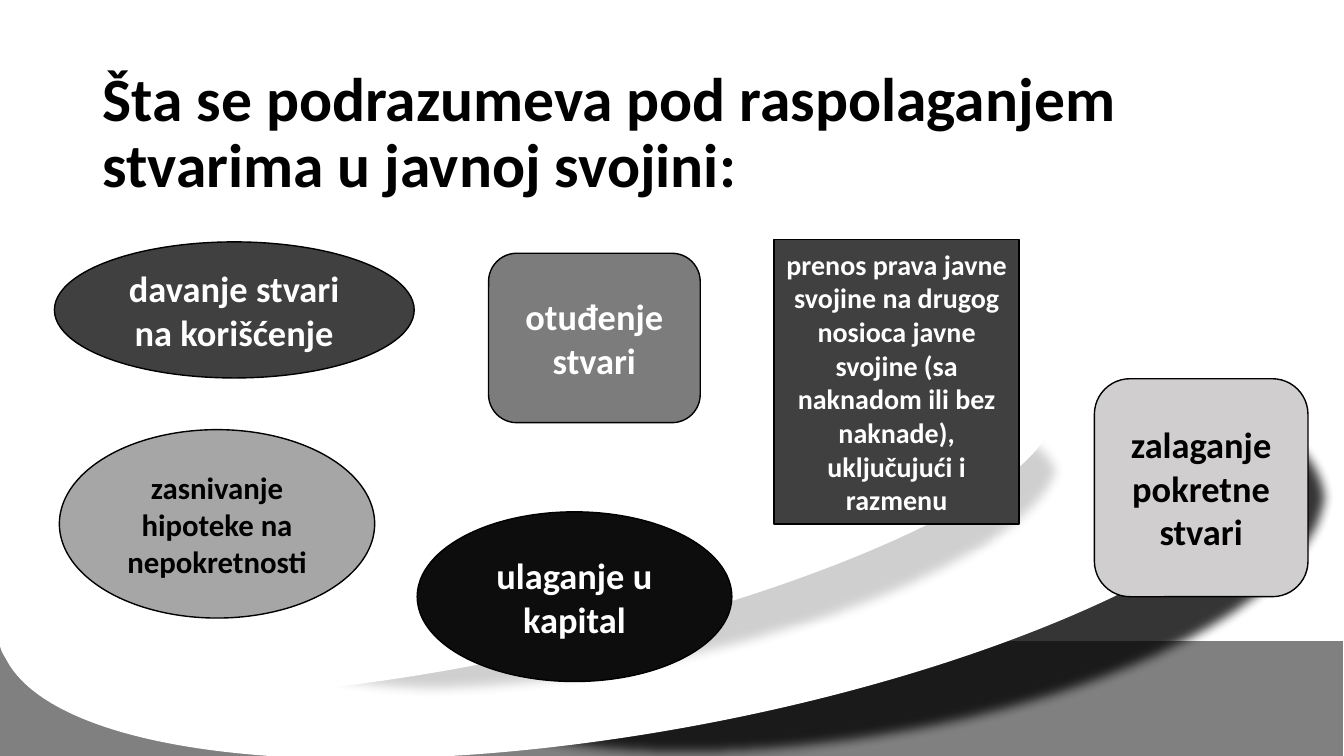
from dataclasses import dataclass

from lxml import etree
from pptx import Presentation
from pptx import util as u
from pptx.dml.color import RGBColor
from pptx.enum import shapes, text
from pptx.oxml.ns import qn

FONT = "Calibri"
COLORS = {
    "white": "FFFFFF",
    "black": "000000",
    "ink": "0D0D0D",
    "charcoal": "404040",
    "slate": "7C7C7C",
    "band": "808080",
    "silver": "A6A6A6",
    "pearl": "D0CECE",
}
RECT = shapes.MSO_SHAPE.RECTANGLE
ROUNDED = shapes.MSO_SHAPE.ROUNDED_RECTANGLE
OVAL = shapes.MSO_SHAPE.OVAL


@dataclass
class Backdrop:
    kind: shapes.MSO_SHAPE
    left: float
    top: float
    width: float
    height: float
    fill: str
    rotation: float = 0
    opacity: int = 100
    soft_edge: float = 0


@dataclass
class Card:
    kind: shapes.MSO_SHAPE
    left: float
    top: float
    width: float
    height: float
    fill: str
    wording: str
    size: float = 26
    ink: str = "white"


# Each sweep is a white ellipse lying over a soft dark one.
BACKDROPS = [
    Backdrop(RECT, -0.7, 457.9, 960, 87.1, "band"),
    Backdrop(OVAL, 224, 255, 732, 282, "black", -7.5, 79, 8),
    Backdrop(OVAL, -8.6, 217.4, 959, 303.1, "white", -10.6),
    Backdrop(OVAL, 168, 306, 600, 174, "black", -12, 19, 8),
    Backdrop(OVAL, -9.4, 288, 769.7, 177.8, "white", -12.7),
]

CARDS = [
    Card(OVAL, 38.9, 172.8, 257, 97.2, "charcoal", "davanje stvari na korišćenje"),
    Card(ROUNDED, 349, 180.9, 151.2, 121, "slate", "otuđenje stvari"),
    Card(RECT, 553, 171.2, 175, 203, "charcoal",
         "prenos prava javne svojine na drugog nosioca javne svojine "
         "(sa naknadom ili bez naknade), uključujući i razmenu", 20),
    Card(OVAL, 42.4, 306.9, 225.2, 134.6, "silver",
         "zasnivanje hipoteke na nepokretnosti", 22, "black"),
    Card(OVAL, 298, 365.6, 224.8, 121.2, "ink", "ulaganje u kapital"),
    Card(ROUNDED, 781.7, 270.5, 152.6, 155.7, "pearl",
         "zalaganje pokretne stvari", 26, "black"),
]


def color(name: str) -> RGBColor:
    return RGBColor.from_string(COLORS[name])


def add_filled_shape(slide, item: Backdrop | Card):
    shape = slide.shapes.add_shape(
        item.kind, u.Pt(item.left), u.Pt(item.top), u.Pt(item.width), u.Pt(item.height))
    shape.shadow.inherit = False
    shape.fill.solid()
    shape.fill.fore_color.rgb = color(item.fill)
    return shape


def write(shape, wording: str, size: float, ink: str, alignment, spacing: float = 1) -> None:
    frame = shape.text_frame
    frame.word_wrap = True
    frame.vertical_anchor = text.MSO_ANCHOR.MIDDLE
    paragraph = frame.paragraphs[0]
    paragraph.alignment = alignment
    paragraph.line_spacing = spacing
    run = paragraph.add_run()
    run.text = wording
    run.font.name = FONT
    run.font.size = u.Pt(size)
    run.font.bold = True
    run.font.color.rgb = color(ink)


def add_backdrop(slide, backdrop: Backdrop) -> None:
    shape = add_filled_shape(slide, backdrop)
    shape.line.fill.background()
    shape.rotation = backdrop.rotation
    properties = shape.element.spPr
    if backdrop.opacity < 100:
        fill_color = properties.find(qn("a:solidFill")).find(qn("a:srgbClr"))
        etree.SubElement(fill_color, qn("a:alpha"), val=str(backdrop.opacity * 1000))
    if backdrop.soft_edge:
        effects = properties.find(qn("a:effectLst"))
        etree.SubElement(effects, qn("a:softEdge"), rad=str(u.Pt(backdrop.soft_edge)))


def add_card(slide, card: Card) -> None:
    shape = add_filled_shape(slide, card)
    shape.line.color.rgb = color("black")
    shape.line.width = u.Pt(1)
    write(shape, card.wording, card.size, card.ink, text.PP_ALIGN.CENTER)


def add_title(slide, wording: str) -> None:
    title = slide.shapes.add_textbox(u.Pt(66.2), u.Pt(43.9), u.Pt(828), u.Pt(104.4))
    write(title, wording, 44, "black", text.PP_ALIGN.LEFT, 0.9)


def main() -> None:
    presentation = Presentation()
    presentation.slide_width = u.Pt(960)
    presentation.slide_height = u.Pt(540)
    slide = presentation.slides.add_slide(presentation.slide_layouts[6])
    for backdrop in BACKDROPS:
        add_backdrop(slide, backdrop)
    add_title(slide, "Šta se podrazumeva pod raspolaganjem stvarima u javnoj svojini:")
    for card in CARDS:
        add_card(slide, card)
    presentation.save("out.pptx")


if __name__ == "__main__":
    main()
